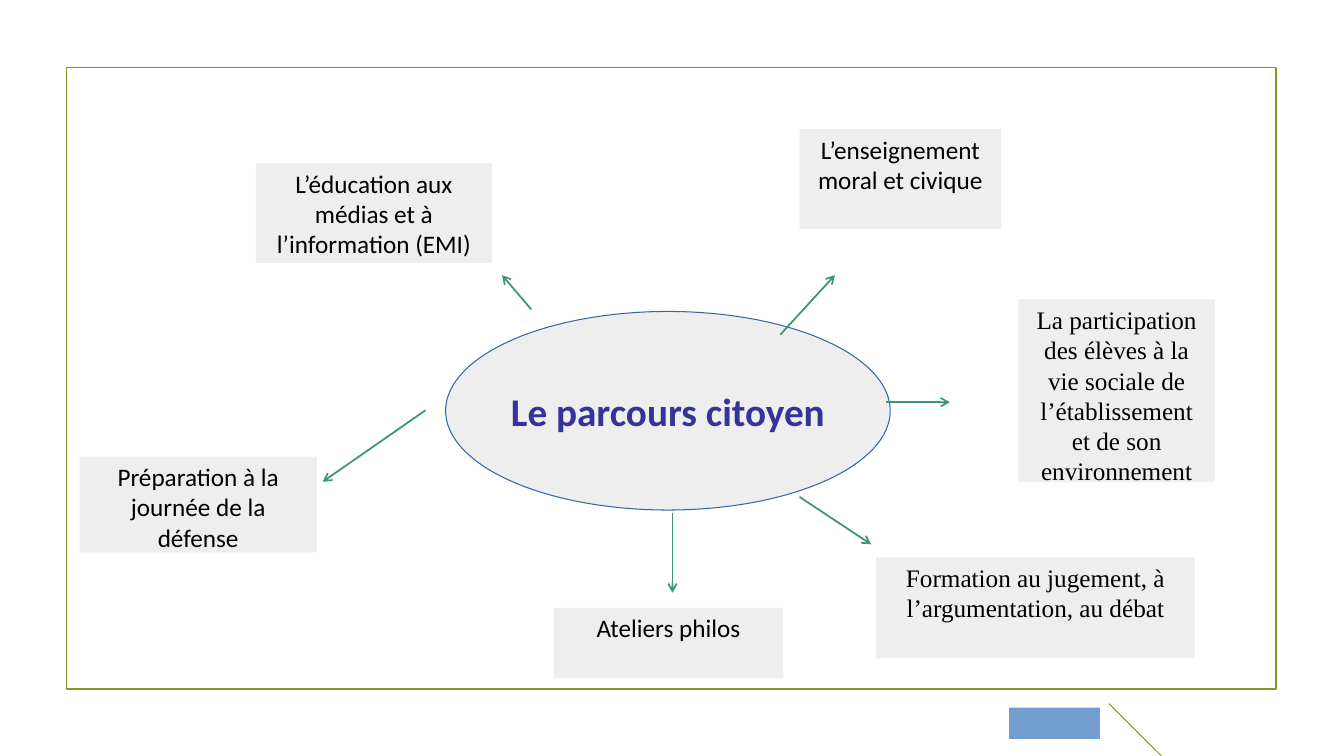
from lxml import etree
from pptx import Presentation, util as u
from pptx.dml.color import RGBColor
from pptx.enum import shapes, text
from pptx.oxml.ns import qn

SLIDE = (13.33, 7.5)
THEME = {
    "panel": "EEEEEE", "frame": "83992A", "arrow": "3C9770", "rim": "3465A4",
    "tag": "729FCF", "hub": "333399", "ink": "000000",
    "sans": "Calibri", "serif": "Times New Roman",
    "hub_size": 28, "size": 18, "line": 1.25, "thin": 0.75,
}
FRAME = (4.95, 8.93, 90.02, 82.27)
HUB = ("Le parcours citoyen", (33.16, 41.2, 33.08, 26.27))
TAG = (75.09, 93.6, 6.75, 4.13)
TAIL = (82.52, 93.07, 86.42, 100)
TOPICS = [
    ("L’éducation aux médias et à l’information (EMI)", "sans",
     (19.05, 21.6, 17.55, 13.2), (39.53, 40.93, 37.36, 36.4)),
    ("L’enseignement moral et civique", "sans",
     (59.49, 17.07, 15, 13.2), (58.06, 44.27, 62.12, 36.4)),
    ("La participation des élèves à la vie sociale de l’établissement "
     "et de son environnement", "serif",
     (75.77, 39.6, 14.63, 24.13), (65.94, 53.2, 70.67, 53.2)),
    ("Formation au jugement, à l’argumentation, au débat", "serif",
     (65.19, 73.73, 23.71, 13.33), (59.49, 65.73, 64.82, 72)),
    ("Ateliers philos", "sans",
     (41.19, 80.4, 17.1, 9.33), (50.04, 67.87, 50.04, 78.4)),
    ("Préparation à la journée de la défense", "sans",
     (5.93, 60.4, 17.63, 12.67), (31.66, 54.27, 24.01, 63.73)),
]


def color(key):
    return RGBColor.from_string(THEME[key])


def place(shares):
    return [u.Inches(SLIDE[i % 2] * v / 100) for i, v in enumerate(shares)]


def add_panel(s, shares, kind="RECTANGLE", fill=None, line=None, width="line"):
    sp = s.shapes.add_shape(shapes.MSO_SHAPE[kind], *place(shares))
    sp.shadow.inherit = False
    if fill:
        sp.fill.solid()
        sp.fill.fore_color.rgb = color(fill)
    else:
        sp.fill.background()
    if line:
        sp.line.color.rgb = color(line)
        sp.line.width = u.Pt(THEME[width])
    else:
        sp.line.fill.background()
    return sp


def write(sp, words, font="sans", size="size", ink="ink", bold=False,
          anchor="TOP", wrap=True):
    tf = sp.text_frame
    tf.word_wrap = wrap
    tf.vertical_anchor = text.MSO_ANCHOR[anchor]
    tf.margin_left = tf.margin_right = u.Inches(0.1)
    tf.margin_top = tf.margin_bottom = u.Inches(0.05)
    p = tf.paragraphs[0]
    p.alignment = text.PP_ALIGN.CENTER
    r = p.add_run()
    r.text = words
    r.font.name = THEME[font]
    r.font.size = u.Pt(THEME[size])
    r.font.bold = bold
    r.font.color.rgb = color(ink)


def add_line(s, ends, ink, width="line", head=True):
    c = s.shapes.add_connector(shapes.MSO_CONNECTOR.STRAIGHT, *place(ends))
    c.line.color.rgb = color(ink)
    c.line.width = u.Pt(THEME[width])
    if head:
        etree.SubElement(c.line._get_or_add_ln(), qn("a:tailEnd"), type="arrow")
    etree.SubElement(c._element.spPr, qn("a:effectLst"))


def main():
    prs = Presentation()
    prs.slide_width, prs.slide_height = map(u.Inches, SLIDE)
    s = prs.slides.add_slide(prs.slide_layouts[6])
    add_panel(s, FRAME, line="frame")
    words, shares = HUB
    hub = add_panel(s, shares, "OVAL", fill="panel", line="rim", width="thin")
    write(hub, words, size="hub_size", ink="hub", bold=True,
          anchor="MIDDLE", wrap=False)
    add_panel(s, TAG, fill="tag")
    add_line(s, TAIL, "frame", "thin", head=False)
    for words, font, shares, ends in TOPICS:
        write(add_panel(s, shares, fill="panel"), words, font=font)
        add_line(s, ends, "arrow")
    prs.save("out.pptx")


if __name__ == "__main__":
    main()
